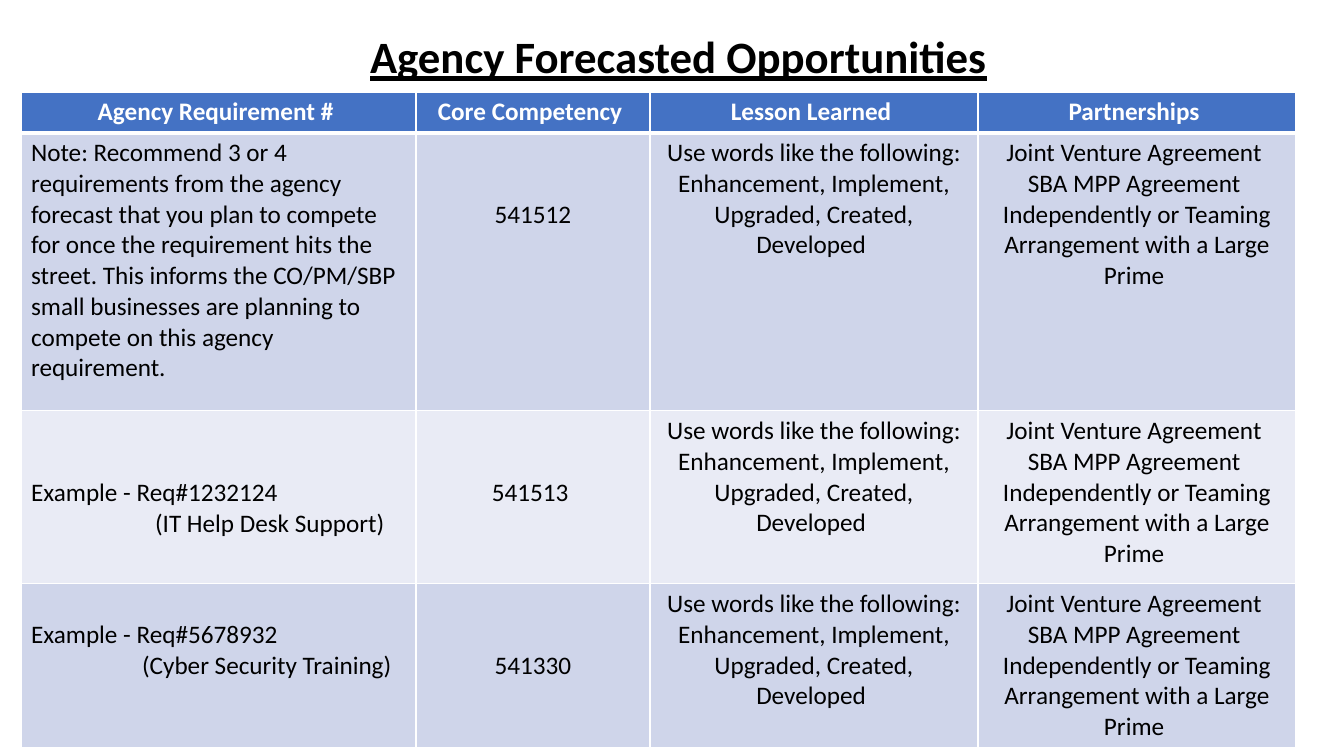
"""Build the Agency Forecasted Opportunities slide."""
from dataclasses import dataclass

import lxml.etree
import pptx
import pptx.dml.color
import pptx.enum.text
import pptx.oxml.ns
import pptx.util

EMU_PER_PX = 914400 / 100.8
LINE_PX = 31
MARGIN_PX = 5
FONT = "Calibri"
WHITE, BLACK, BLUE = "FFFFFF", "000000", "4472C4"
BANDS = ["CFD5EA", "E9EBF5", "CFD5EA"]
COLUMN_WIDTHS = [395, 234, 328, 318]
ROW_HEIGHTS = [40, 278, 173, 159]
LEFT = pptx.enum.text.PP_ALIGN.LEFT
CENTER = pptx.enum.text.PP_ALIGN.CENTER


@dataclass
class Entry:
    """Content of one cell; skipped_lines lowers the text by whole lines."""

    text: str
    skipped_lines: int = 0
    align: pptx.enum.text.PP_ALIGN = CENTER
    last_indent: int = 0


def px(length: int) -> int:
    """Turn pixels into EMU."""
    return round(length * EMU_PER_PX)


def rgb(value: str) -> pptx.dml.color.RGBColor:
    """Turn a hex string into a colour."""
    return pptx.dml.color.RGBColor.from_string(value)


def format_runs(frame, size: int, color: str, bold: bool, underline: bool = False) -> None:
    """Format every run of a text frame."""
    for paragraph in frame.paragraphs:
        for run in paragraph.runs:
            run.font.name = FONT
            run.font.size = pptx.util.Pt(size)
            run.font.color.rgb = rgb(color)
            run.font.bold = bold
            run.font.underline = underline


def add_border(cell, side: str, points: int) -> None:
    """Add a white border to one side of a cell."""
    qn = pptx.oxml.ns.qn
    properties = cell._tc.get_or_add_tcPr()
    line = lxml.etree.SubElement(properties, qn(f"a:ln{side}"), w=str(pptx.util.Pt(points)))
    fill = lxml.etree.SubElement(line, qn("a:solidFill"))
    lxml.etree.SubElement(fill, qn("a:srgbClr"), val=WHITE)


def draw_entry(cell, entry: Entry, row: int) -> None:
    """Fill one table cell with its entry."""
    header = row == 0
    thick_sides = {0: "B", 1: "T"}
    for side in "LRTB":
        add_border(cell, side, 3 if side == thick_sides.get(row) else 1)
    cell.fill.solid()
    cell.fill.fore_color.rgb = rgb(BLUE if header else BANDS[row - 1])
    cell.margin_top = px(MARGIN_PX + entry.skipped_lines * LINE_PX)
    cell.margin_bottom = px(MARGIN_PX)
    cell.text_frame.text = entry.text
    for paragraph in cell.text_frame.paragraphs:
        paragraph.alignment = entry.align
    if entry.last_indent:
        last = cell.text_frame.paragraphs[-1]
        last._p.get_or_add_pPr().set("marL", str(px(entry.last_indent)))
    format_runs(cell.text_frame, 18, WHITE if header else BLACK, header)


def requirement_rows() -> list[list[Entry]]:
    """List the table's rows, header first."""
    headings = ["Agency Requirement # ", "Core Competency ", "Lesson Learned ", "Partnerships "]
    lesson = Entry(
        "Use words like the following: Enhancement, Implement, Upgraded, Created, Developed "
    )
    partnerships = Entry(
        "Joint Venture Agreement \nSBA MPP Agreement \n"
        "Independently or Teaming Arrangement with a Large Prime "
    )
    note = Entry(
        "Note: Recommend 3 or 4 requirements from the agency forecast that you plan to "
        "compete for once the requirement hits the street. This informs the CO/PM/SBP "
        "small businesses are planning to compete on this agency requirement.",
        align=LEFT,
    )
    help_desk = Entry("Example - Req#1232124\n(IT Help Desk Support)", 2, LEFT, 124)
    training = Entry("Example - Req#5678932\n(Cyber Security Training)", 1, LEFT, 111)
    requirements = [(note, "541512"), (help_desk, "541513 "), (training, "541330")]
    return [[Entry(heading) for heading in headings]] + [
        [requirement, Entry(code, 2), lesson, partnerships]
        for requirement, code in requirements
    ]


def draw_title(title) -> None:
    """Place and format the slide title."""
    title.left, title.top, title.width, title.height = px(360), px(24), px(724), px(65)
    frame = title.text_frame
    frame.text = "Agency Forecasted Opportunities"
    frame.word_wrap = True
    frame.auto_size = pptx.enum.text.MSO_AUTO_SIZE.NONE
    frame.vertical_anchor = pptx.enum.text.MSO_ANCHOR.TOP
    frame.paragraphs[0].alignment = LEFT
    format_runs(frame, 32, BLACK, True, True)


def draw_forecast(slide) -> None:
    """Draw the table of forecasted requirements."""
    forecast = slide.shapes.add_table(
        len(ROW_HEIGHTS), len(COLUMN_WIDTHS), px(21), px(92),
        px(sum(COLUMN_WIDTHS)), px(sum(ROW_HEIGHTS)),
    ).table
    for column, width in zip(forecast.columns, COLUMN_WIDTHS):
        column.width = px(width)
    for row, height in zip(forecast.rows, ROW_HEIGHTS):
        row.height = px(height)
    for row_index, entries in enumerate(requirement_rows()):
        for column_index, entry in enumerate(entries):
            draw_entry(forecast.cell(row_index, column_index), entry, row_index)


def main() -> None:
    """Build and save the presentation."""
    presentation = pptx.Presentation()
    presentation.slide_width, presentation.slide_height = px(1344), px(756)
    slide = presentation.slides.add_slide(presentation.slide_layouts[5])
    draw_title(slide.shapes.title)
    draw_forecast(slide)
    presentation.save("out.pptx")


if __name__ == "__main__":
    main()
